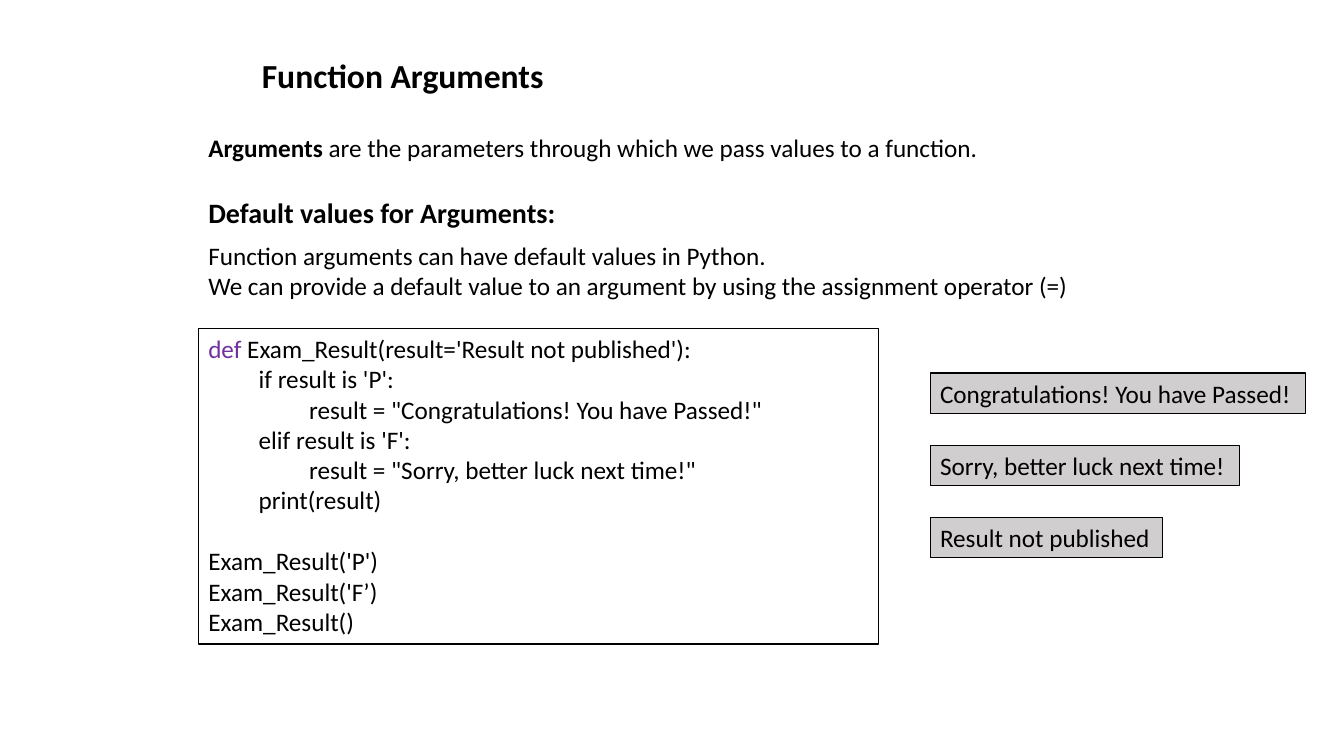
from pptx import Presentation
from pptx.util import Cm, Pt
from pptx.dml.color import RGBColor
from pptx.enum import shapes, text

COLORS = {"text": "000000", "keyword": "7030A0", "output": "D0CECE"}
LEFT = 5


def write(sp, lines, size=18, bold=False):
    """Fill a shape with paragraphs, each a list of runs."""
    tf = sp.text_frame
    tf.word_wrap = False
    tf.vertical_anchor = text.MSO_ANCHOR.TOP
    for i, runs in enumerate(lines):
        p = tf.paragraphs[0] if i == 0 else tf.add_paragraph()
        p.alignment = text.PP_ALIGN.LEFT
        p.font.name = "Calibri"
        p.font.size = Pt(size)
        p.font.bold = bold
        p.font.color.rgb = RGBColor.from_string(COLORS["text"])
        for words in runs:
            p.add_run().text = words
    return tf


def add_frame(x, y, w, h):
    """Add an unfilled rectangle with a thin black outline."""
    sp = s.shapes.add_shape(shapes.MSO_SHAPE.RECTANGLE, Cm(x), Cm(y), Cm(w), Cm(h))
    sp.shadow.inherit = False
    sp.fill.background()
    sp.line.color.rgb = RGBColor.from_string(COLORS["text"])
    sp.line.width = Pt(0.75)
    return sp


prs = Presentation()
prs.slide_width, prs.slide_height = Cm(33.87), Cm(19.05)
s = prs.slides.add_slide(prs.slide_layouts[6])

# Title, headings and explanations
passages = [
    (6.35, 1.27, 7.7, 1.27, 24, True, [["Function Arguments"]]),
    (LEFT, 4.8, 9.5, 1.12, 20, True, [["Default values for Arguments:"]]),
    (LEFT, 3.2, 20.12, 1.02, 18, False,
     [["Arguments", " are the parameters through which we pass values to a function."]]),
    (LEFT, 5.92, 22.45, 1.8, 18, False,
     [["Function arguments can have default values in Python."],
      ["We can provide a default value to an argument by using the assignment operator (=)"]]),
]
for x, y, w, h, size, bold, lines in passages:
    sp = s.shapes.add_textbox(Cm(x), Cm(y), Cm(w), Cm(h))
    tf = write(sp, lines, size, bold)
    if len(lines[0]) > 1:
        tf.paragraphs[0].runs[0].font.bold = True

# Code listing
code = [
    ["def ", "Exam_Result(result='Result not published'):"],
    ["\tif result is 'P':"],
    ["\t\tresult = \"Congratulations! You have Passed!\""],
    ["\telif result is 'F':"],
    ["\t\tresult = \"Sorry, better luck next time!\""],
    ["\tprint(result)"],
    ["Exam_Result('P')"],
    ["Exam_Result('F’)"],
    ["Exam_Result()"],
]
tf = write(add_frame(LEFT, 8.28, 17.15, 7.95), code)
tf.word_wrap = True
keyword = tf.paragraphs[0].runs[0]
keyword.font.color.rgb = RGBColor.from_string(COLORS["keyword"])
tf.paragraphs[6].space_before = Pt(22)  # one line between function and calls

# Printed results
outputs = [
    ("Congratulations! You have Passed!", 9.45),
    ("Sorry, better luck next time!", 7.8),
    ("Result not published", 5.87),
]
for i, (words, w) in enumerate(outputs):
    sp = add_frame(23.44, 9.4 + 1.82 * i, w, 1.02)
    sp.fill.solid()
    sp.fill.fore_color.rgb = RGBColor.from_string(COLORS["output"])
    write(sp, [[words]])

prs.save("out.pptx")
